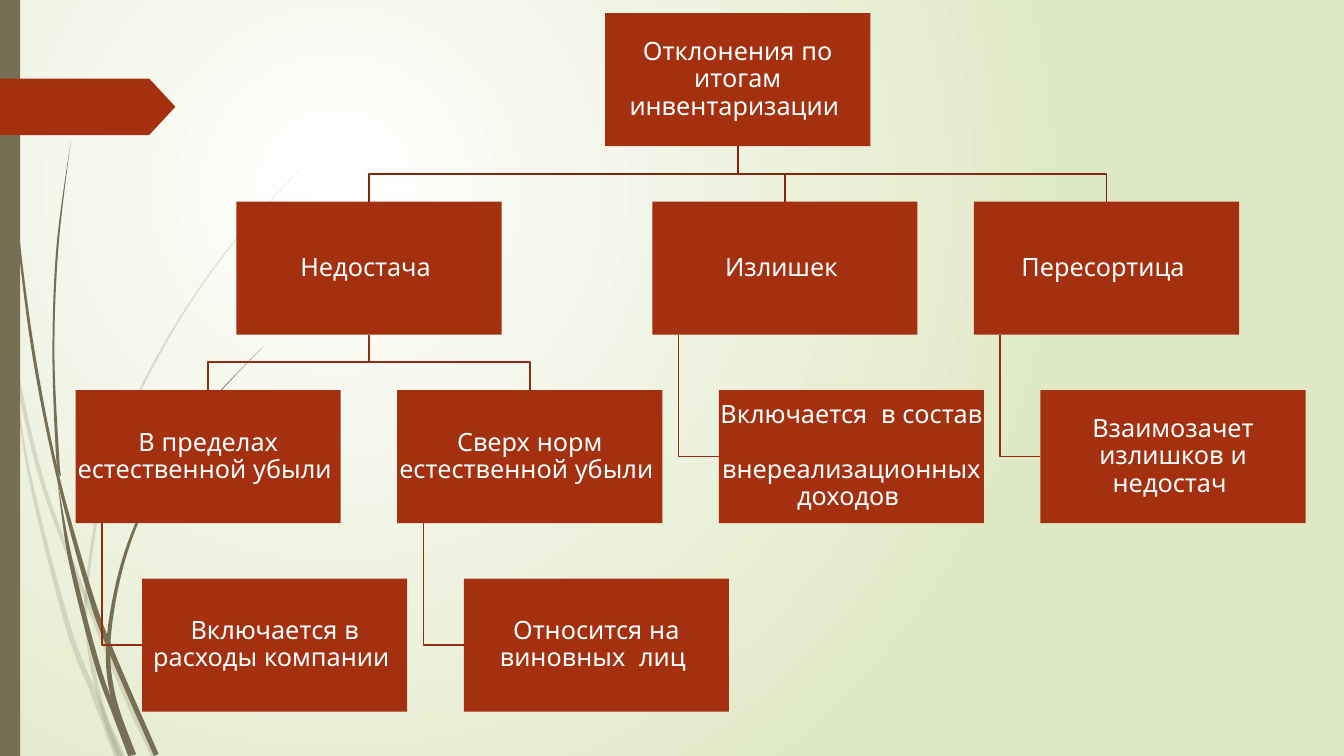
import math
from dataclasses import dataclass
from typing import Iterator, Optional

import lxml.etree
import pptx
import pptx.dml.color
import pptx.enum.shapes
import pptx.enum.text
import pptx.oxml.ns
import pptx.shapes.autoshape
import pptx.slide
import pptx.util

Point = tuple[float, float]
Shape = pptx.shapes.autoshape.Shape
Slide = pptx.slide.Slide
qn = pptx.oxml.ns.qn

EMU_PER_PX = 9144  # 100 px to the inch
SLIDE_W, SLIDE_H = 1333, 750
BOX_W, BOX_H = 263, 132
FIRST_LEFT, FIRST_TOP = 75, 13
COLUMN_STEP, ROW_STEP = 319, 187
HANG = 66  # a lone child stands this far right of its parent
STEM_INSET = 26  # its link leaves the parent this far from the left

RUST, OLIVE, WHITE, SAGE = "A53010", "766F54", "FFFFFF", "DFE8C4"
TOP_LINK, LOWER_LINK = "84260D", "962C0F"


@dataclass(frozen=True)
class Topic:
    text: str
    children: tuple["Topic", ...] = ()
    column: Optional[int] = None  # set on the third row, which carries the layout


@dataclass(frozen=True)
class Box:
    topic: Topic
    row: int
    left: float

    @property
    def top(self) -> int:
        return FIRST_TOP + self.row * ROW_STEP

    @property
    def bottom(self) -> int:
        return self.top + BOX_H

    @property
    def middle(self) -> float:
        return self.left + BOX_W / 2


@dataclass(frozen=True)
class Blade:
    """A grass blade: points along its spine and its thickness at each."""
    spine: tuple[Point, ...]
    thickness: tuple[int, ...]
    alpha: int = 100


DEVIATIONS = Topic("Отклонения по итогам инвентаризации ", (
    Topic("Недостача ", (
        Topic("В пределах естественной убыли ", (Topic("Включается в расходы компании "),), 0),
        Topic("Сверх норм естественной убыли ", (Topic("Относится на виновных  лиц "),), 1),
    )),
    Topic("Излишек ", (Topic("Включается  в состав  внереализационных доходов ", column=2),)),
    Topic("Пересортица ", (Topic("Взаимозачет излишков и недостач ", column=3),)),
))

GRASS = [
    # Pale tuft: long stem, its root, arching blade
    Blade(((0, 290), (12, 350), (42, 478), (87, 598), (125, 692), (153, 751)), (3, 4, 4, 4, 4, 5), 20),
    Blade(((11, 350), (29, 470), (67, 620), (94, 690), (119, 751)), (0, 3, 5, 6, 10), 20),
    Blade(((312, 153), (228, 245), (159, 349), (108, 462), (86, 584), (89, 646), (104, 711), (119, 751)),
          (0, 1, 2, 3, 3, 4, 4, 5), 20),
    # Dark tuft: long stem, its root, upright blade, arching blade
    Blade(((3, 0), (7, 109), (18, 233), (34, 355), (58, 475), (90, 591), (112, 650), (155, 749)),
          (1, 1, 2, 3, 3, 5, 5, 5)),
    Blade(((57, 477), (70, 556), (96, 658), (114, 708), (131, 749)), (0, 4, 5, 5, 8)),
    Blade(((70, 141), (57, 245), (53, 349), (57, 451), (60, 472)), (0, 2, 2, 3, 1)),
    Blade(((261, 344), (204, 405), (157, 475), (124, 551), (108, 632), (112, 690), (133, 749)),
          (0, 1, 2, 3, 4, 5, 4)),
]
TAG_OUTLINE = [(0, 78), (148, 78), (174, 106), (148, 134), (0, 134)]


def px(length: float) -> int:
    return round(length * EMU_PER_PX)


def rgb(color: str) -> pptx.dml.color.RGBColor:
    return pptx.dml.color.RGBColor.from_string(color)


def paint(shape: Shape, color: str, alpha: int = 100) -> None:
    shape.shadow.inherit = False
    shape.line.fill.background()
    shape.fill.solid()
    shape.fill.fore_color.rgb = rgb(color)
    if alpha < 100:
        tint = shape._element.spPr.find(".//" + qn("a:srgbClr"))
        lxml.etree.SubElement(tint, qn("a:alpha")).set("val", str(alpha * 1000))


def add_rect(slide: Slide, left: float, top: int, width: int, height: int, color: str) -> Shape:
    rect = slide.shapes.add_shape(pptx.enum.shapes.MSO_SHAPE.RECTANGLE,
                                  px(left), px(top), px(width), px(height))
    paint(rect, color)
    return rect


def add_outline(slide: Slide, points: list[Point], closed: bool = True) -> Shape:
    start, *rest = [(px(x), px(y)) for x, y in points]
    builder = slide.shapes.build_freeform(*start, scale=1.0)
    builder.add_line_segments(rest, close=closed)
    return builder.convert_to_shape()


def smooth(knots: list[Point]) -> list[Point]:
    """Put two curve handles between neighbouring knots (Catmull-Rom rule)."""
    padded = [knots[0], *knots, knots[-1]]
    curve = [knots[0]]
    for before, start, end, after in zip(padded, padded[1:], padded[2:], padded[3:]):
        curve += [
            (start[0] + (end[0] - before[0]) / 6, start[1] + (end[1] - before[1]) / 6),
            (end[0] - (after[0] - start[0]) / 6, end[1] - (after[1] - start[1]) / 6),
            end,
        ]
    return curve


def bend(outline: Shape) -> None:
    """Turn every three straight segments into one cubic curve."""
    segments = list(outline._element.iter(qn("a:lnTo")))
    for first, second, third in zip(segments[::3], segments[1::3], segments[2::3]):
        first.tag = qn("a:cubicBezTo")
        for spare in (second, third):
            first.append(spare[0])
            spare.getparent().remove(spare)


def add_blade(slide: Slide, blade: Blade) -> None:
    padded = [blade.spine[0], *blade.spine, blade.spine[-1]]
    one_side, other_side = [], []
    for before, (x, y), after, thickness in zip(padded, blade.spine, padded[2:], blade.thickness):
        run, rise = after[0] - before[0], after[1] - before[1]
        reach = thickness / 2 / math.hypot(run, rise)
        one_side.append((x - rise * reach, y + run * reach))
        other_side.insert(0, (x + rise * reach, y - run * reach))
    far_end = other_side[0]
    # Two equal handles at the far end make a straight edge between the sides
    outline = add_outline(slide, smooth(one_side) + [far_end, far_end] + smooth(other_side))
    bend(outline)
    paint(outline, OLIVE, blade.alpha)


def write_text(shape: Shape, text: str, *, font: str = "Quicksand", size: int = 18,
               color: str = WHITE, inset: int = 1, spacing: float = 0.9) -> None:
    frame = shape.text_frame
    frame.word_wrap = True
    frame.vertical_anchor = pptx.enum.text.MSO_ANCHOR.MIDDLE
    frame.margin_left = frame.margin_right = frame.margin_top = frame.margin_bottom = px(inset)
    paragraph = frame.paragraphs[0]
    paragraph.alignment = pptx.enum.text.PP_ALIGN.CENTER
    paragraph.line_spacing = spacing
    run = paragraph.add_run()
    run.text = text
    run.font.name, run.font.size = font, pptx.util.Pt(size)
    run.font.color.rgb = rgb(color)


def left_of(topic: Topic) -> float:
    """Stand in the topic's column, or else be placed by its children."""
    if topic.column is not None:
        return FIRST_LEFT + topic.column * COLUMN_STEP
    if len(topic.children) == 1:
        return left_of(topic.children[0]) - HANG
    return (left_of(topic.children[0]) + left_of(topic.children[-1])) / 2


def child_boxes(box: Box) -> list[Box]:
    children = box.topic.children
    if len(children) == 1:
        return [Box(children[0], box.row + 1, box.left + HANG)]
    return [Box(child, box.row + 1, left_of(child)) for child in children]


def walk(box: Box) -> Iterator[Box]:
    yield box
    for child in child_boxes(box):
        yield from walk(child)


def add_link(slide: Slide, parent: Box, child: Box) -> None:
    if len(parent.topic.children) == 1:
        stem, level = parent.left + STEM_INSET, child.top + BOX_H / 2
        points = [(stem, parent.bottom), (stem, level), (child.left, level)]
    else:
        level = (parent.bottom + child.top) / 2
        points = [(parent.middle, parent.bottom), (parent.middle, level),
                  (child.middle, level), (child.middle, child.top)]
    link = add_outline(slide, points, closed=False)
    link.shadow.inherit = False
    link.fill.background()
    link.line.color.rgb = rgb(TOP_LINK if parent.row == 0 else LOWER_LINK)
    link.line.width = pptx.util.Pt(1.25)


def set_background(slide: Slide) -> None:
    fill = slide.background.fill
    fill.gradient()
    for stop, color in zip(fill.gradient_stops, (WHITE, SAGE)):
        stop.color.rgb = rgb(color)
    linear = next(slide._element.iter(qn("a:lin")))
    glow = lxml.etree.SubElement(linear.getparent(), qn("a:path"), path="circle")
    lxml.etree.SubElement(glow, qn("a:fillToRect"), l="50000", t="50000", r="100000", b="100000")
    linear.getparent().replace(linear, glow)


def main() -> None:
    deck = pptx.Presentation()
    deck.slide_width, deck.slide_height = px(SLIDE_W), px(SLIDE_H)
    slide = deck.slides.add_slide(deck.slide_layouts[6])
    set_background(slide)

    # Grass, side bar and tag
    for blade in GRASS:
        add_blade(slide, blade)
    add_rect(slide, 0, 0, 20, SLIDE_H, OLIVE)
    paint(add_outline(slide, TAG_OUTLINE), RUST)

    # Links lie under the boxes
    boxes = list(walk(Box(DEVIATIONS, 0, left_of(DEVIATIONS))))
    for parent in boxes:
        for child in child_boxes(parent):
            add_link(slide, parent, child)
    for box in boxes:
        write_text(add_rect(slide, box.left, box.top, BOX_W, BOX_H, RUST), box.topic.text)

    deck.save("out.pptx")


if __name__ == "__main__":
    main()
